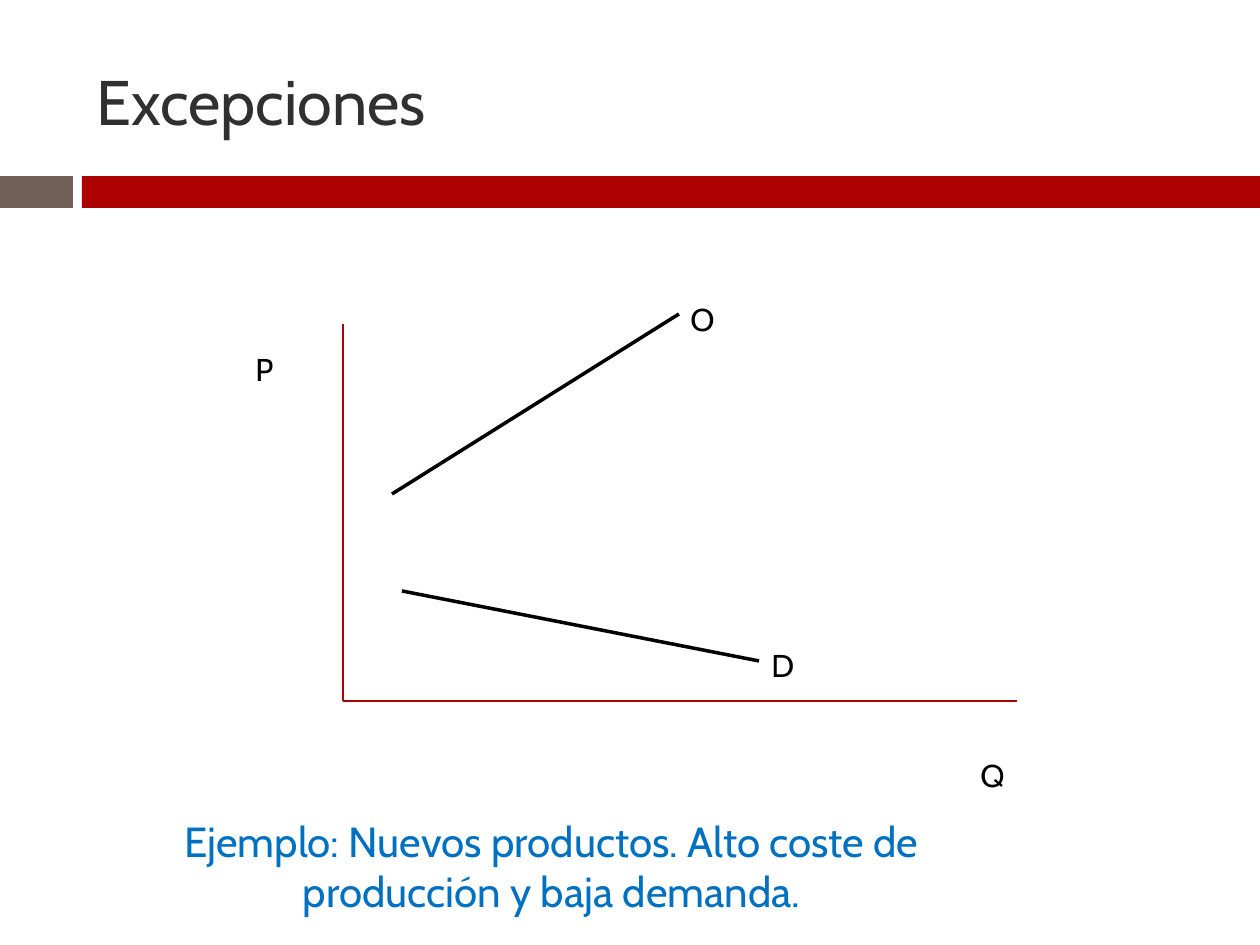
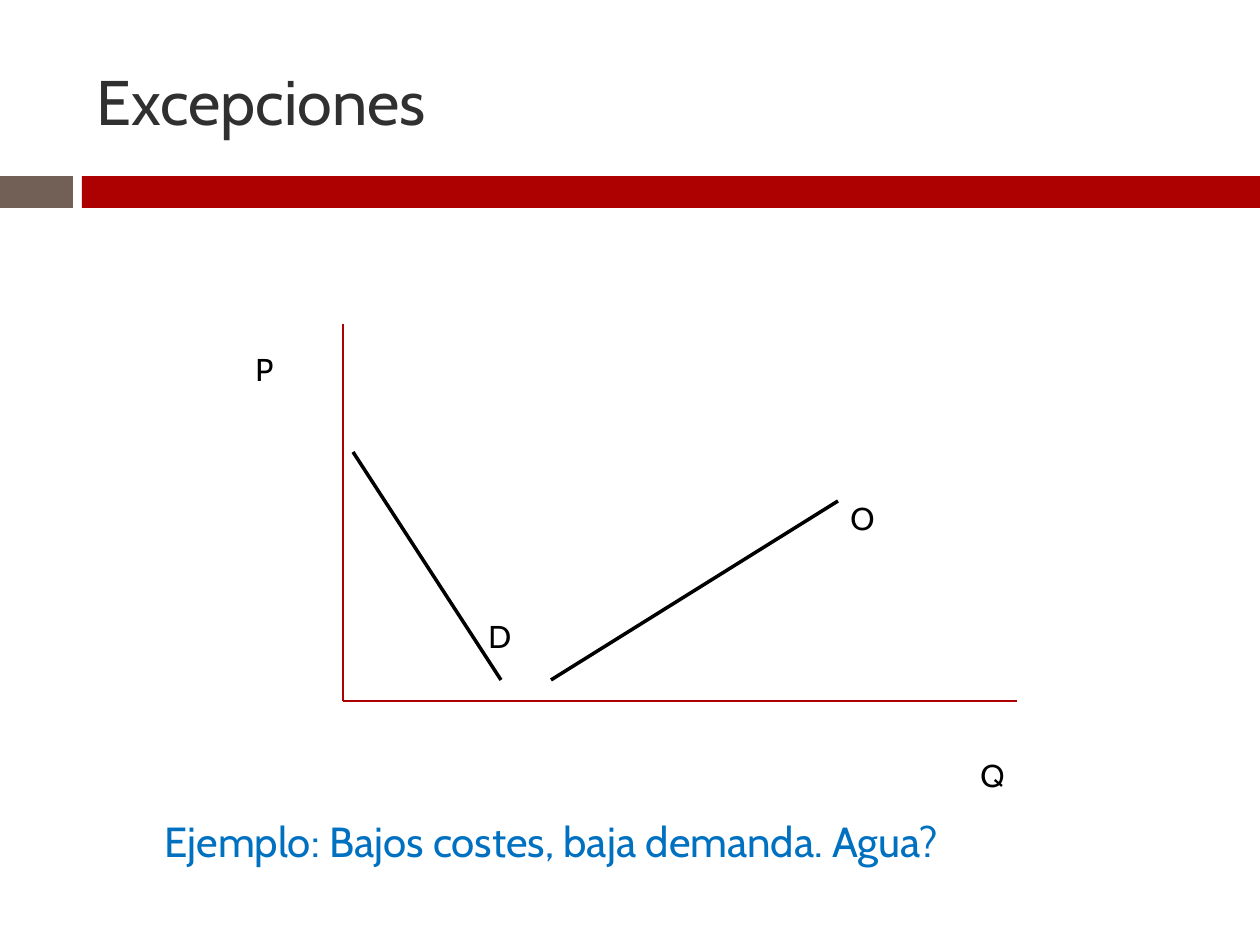
from lxml.etree import SubElement
from pptx import Presentation
from pptx.dml.color import RGBColor
from pptx.enum.shapes import MSO_CONNECTOR, MSO_SHAPE
from pptx.enum.text import MSO_ANCHOR, MSO_AUTO_SIZE, PP_ALIGN
from pptx.oxml.ns import qn
from pptx.util import Emu, Pt

# Content: each curve is (label, start, end, label box), in px
SLIDES = [
    {
        "title": "Excepciones",
        "curves": [
            ("D", (402, 591), (759, 661), (759, 640, 44, 50)),
            ("O", (392, 494), (679, 314), (678, 294, 50, 50)),
        ],
        "example": "Ejemplo: Nuevos productos. Alto coste de producción y baja demanda.",
        "example_height": 115,
    },
    {
        "title": "Excepciones",
        "curves": [
            ("D", (501, 680), (353, 452), (476, 611, 44, 50)),
            ("O", (551, 680), (838, 501), (838, 493, 50, 50)),
        ],
        "example": "Ejemplo: Bajos costes, baja demanda. Agua?",
        "example_height": 63,
    },
]

# Shared style and geometry
PX = 914400 / 126
WIDTH, HEIGHT = 1260, 945
FONT = "Cabin"
RED, BROWN, GREY, BLACK, BLUE = "AD0101", "726056", "303030", "000000", "0070C0"
TITLE_BOX = (84, 32, 1124, 136)
BANDS = [((0, 176, 73, 32), BROWN), ((82, 176, 1178, 32), RED)]
AXIS_TOP, ORIGIN, AXIS_RIGHT = (343, 324), (343, 701), (1017, 701)
AXIS_LABELS = [("P", (243, 344, 100, 50)), ("Q", (968, 750, 139, 50))]
EXAMPLE_LEFT, EXAMPLE_TOP, EXAMPLE_WIDTH = 115, 809, 873


def px(*lengths):
    return [Emu(round(length * PX)) for length in lengths]


def color(value):
    return RGBColor.from_string(value)


def write(frame, text, size, text_color, align=PP_ALIGN.LEFT):
    paragraph = frame.paragraphs[0]
    paragraph.alignment = align
    run = paragraph.add_run()
    run.text = text
    run.font.name = FONT
    run.font.size = Pt(size)
    run.font.color.rgb = color(text_color)


def add_title(slide, text):
    title = slide.shapes.title
    title.left, title.top, title.width, title.height = px(*TITLE_BOX)
    frame = title.text_frame
    frame.auto_size = MSO_AUTO_SIZE.NONE
    frame.vertical_anchor = MSO_ANCHOR.MIDDLE
    write(frame, text, 36, GREY)


def add_band(slide, box, fill):
    band = slide.shapes.add_shape(MSO_SHAPE.RECTANGLE, *px(*box))
    band.shadow.inherit = False
    band.fill.solid()
    band.fill.fore_color.rgb = color(fill)
    band.line.fill.background()


def add_line(slide, start, end, line_color, width):
    line = slide.shapes.add_connector(MSO_CONNECTOR.STRAIGHT, *px(*start, *end))
    line.line.color.rgb = color(line_color)
    line.line.width = Pt(width)
    SubElement(line._element.spPr, qn("a:effectLst"))


def add_text(slide, box, text, size=18, text_color=BLACK, align=PP_ALIGN.LEFT, wrap=True):
    frame = slide.shapes.add_textbox(*px(*box)).text_frame
    frame.word_wrap = wrap
    frame.auto_size = MSO_AUTO_SIZE.SHAPE_TO_FIT_TEXT
    write(frame, text, size, text_color, align)


def build_slide(presentation, content):
    slide = presentation.slides.add_slide(presentation.slide_layouts.get_by_name("Title Only"))
    for box, fill in BANDS:
        add_band(slide, box, fill)
    add_title(slide, content["title"])

    # Axes
    for start, end in [(AXIS_TOP, ORIGIN), (ORIGIN, AXIS_RIGHT)]:
        add_line(slide, start, end, RED, 0.79)
    for label, box in AXIS_LABELS:
        add_text(slide, box, label)

    # Supply and demand
    for label, start, end, box in content["curves"]:
        add_line(slide, start, end, BLACK, 2)
        add_text(slide, box, label, wrap=False)

    # Example below the diagram
    example_box = (EXAMPLE_LEFT, EXAMPLE_TOP, EXAMPLE_WIDTH, content["example_height"])
    add_text(slide, example_box, content["example"], 24, BLUE, PP_ALIGN.CENTER)


def main():
    presentation = Presentation()
    presentation.slide_width, presentation.slide_height = px(WIDTH, HEIGHT)
    for content in SLIDES:
        build_slide(presentation, content)
    presentation.save("out.pptx")


if __name__ == "__main__":
    main()
